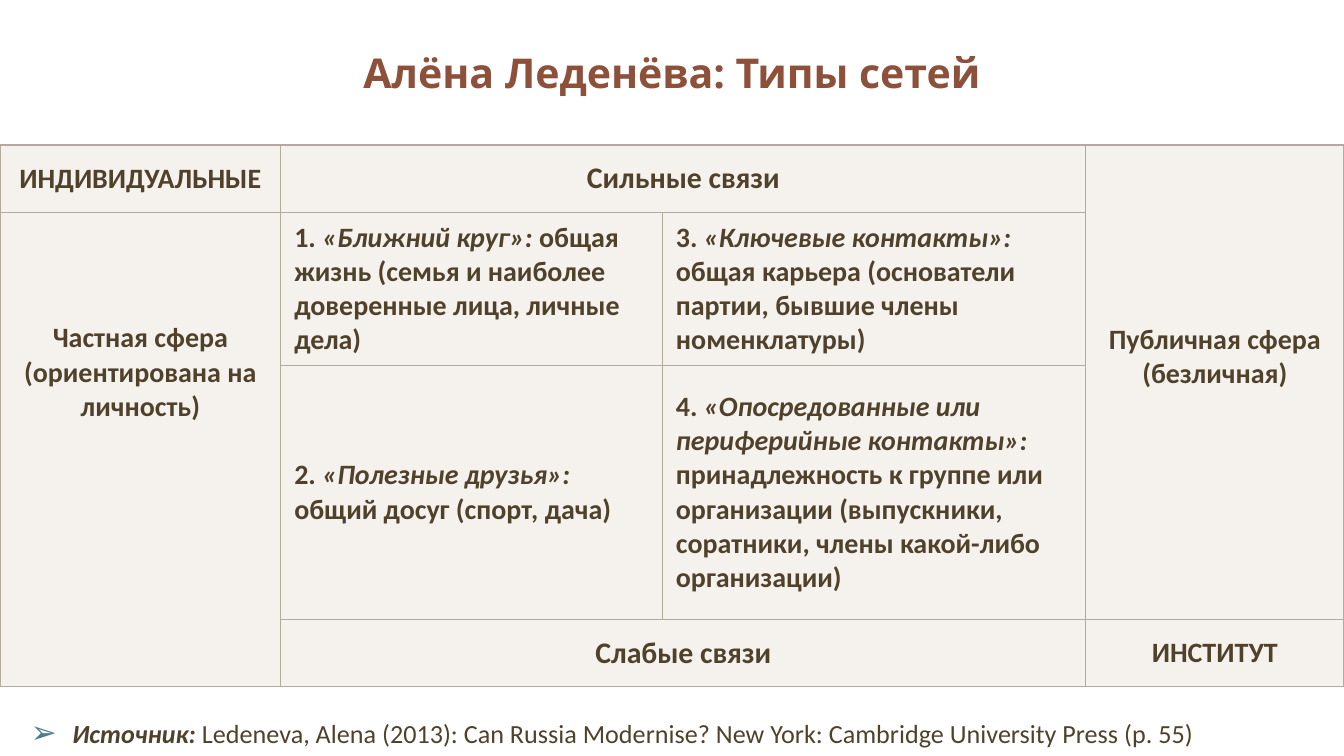
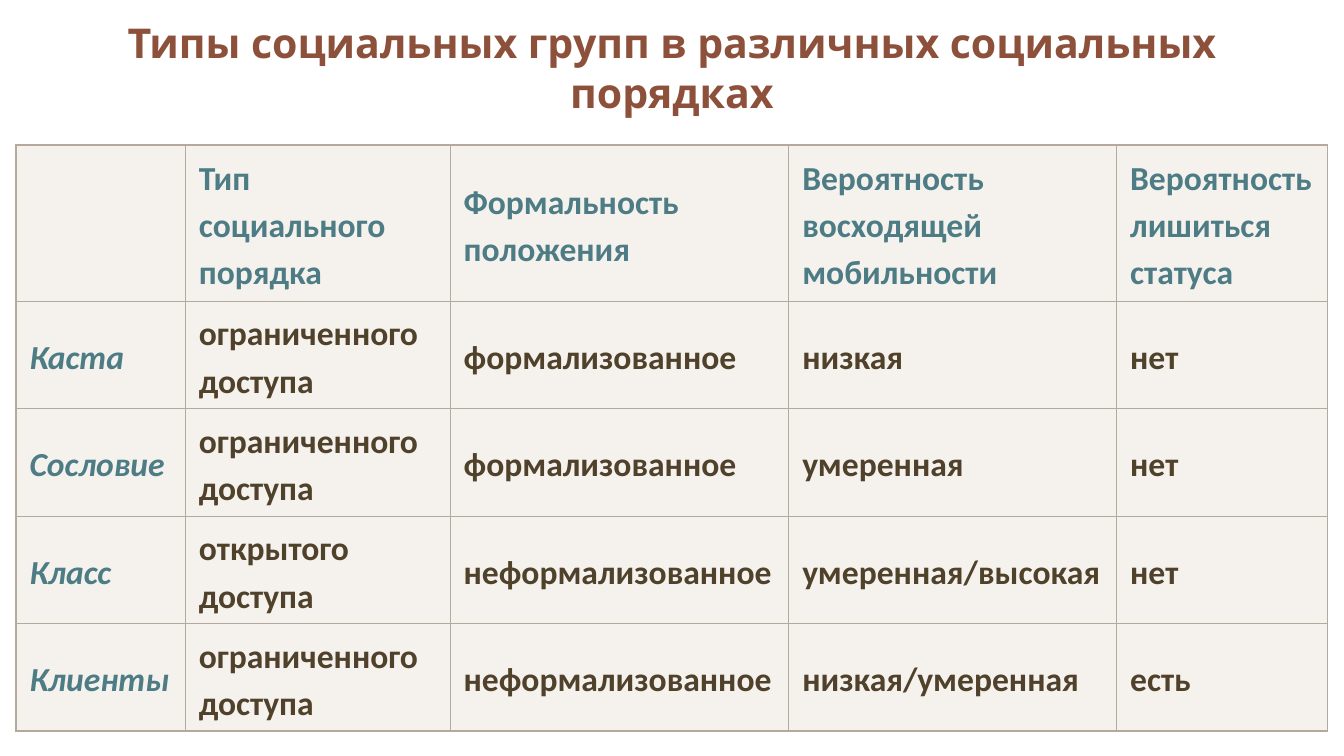
import pptx
import pptx.util
import pptx.dml.color
import pptx.enum.text
import pptx.oxml.ns
from lxml import etree

Inches, Pt = pptx.util.Inches, pptx.util.Pt
RGB = pptx.dml.color.RGBColor
ALIGN = pptx.enum.text.PP_ALIGN
ANCHOR = pptx.enum.text.MSO_ANCHOR
qn = pptx.oxml.ns.qn

COLORS = {"title": "8D503B", "text": "50412B", "heading": "4D7C85",
          "cell": "EFEAE4", "border": "B3AA9D", "bullet": "4D7C8B"}


def write_runs(paragraph, runs, size, color="text", font="Calibri"):
    """Add (text, bold, italic) runs to a paragraph."""
    for text, bold, italic in runs:
        run = paragraph.add_run()
        run.text = text
        run.font.size, run.font.name = Pt(size), font
        run.font.bold, run.font.italic = bold, italic
        run.font.color.rgb = RGB.from_string(COLORS[color])


def add_grid(slide, left, top, widths, heights, merges=()):
    """Add a table with translucent cells, thin inner and thicker outer borders."""
    table = slide.shapes.add_table(
        len(heights), len(widths), Inches(left), Inches(top),
        Inches(sum(widths)), Inches(sum(heights))).table
    table.first_row = table.horz_banding = False
    for column, width in zip(table.columns, widths):
        column.width = Inches(width)
    for row, height in zip(table.rows, heights):
        row.height = Inches(height)
    for first, last in merges:
        table.cell(*first).merge(table.cell(*last))

    for r in range(len(heights)):
        for c in range(len(widths)):
            cell = table.cell(r, c)
            cell.vertical_anchor = ANCHOR.MIDDLE
            cell.fill.solid()
            cell.fill.fore_color.rgb = RGB.from_string(COLORS["cell"])
            props = cell._tc.get_or_add_tcPr()
            etree.SubElement(props.find(".//" + qn("a:srgbClr")), qn("a:alpha"), val="60000")
            rows, cols = (cell.span_height, cell.span_width) if cell.is_merge_origin else (1, 1)
            outer = {"L": c == 0, "R": c + cols == len(widths),
                     "T": r == 0, "B": r + rows == len(heights)}
            for place, (side, is_outer) in enumerate(outer.items()):
                line = etree.Element(qn("a:ln" + side), w=str(Pt(1 if is_outer else 0.5)))
                fill = etree.SubElement(line, qn("a:solidFill"))
                etree.SubElement(fill, qn("a:srgbClr"), val=COLORS["border"])
                props.insert(place, line)
    return table


# Widescreen 16:9
prs = pptx.Presentation()
prs.slide_width = Inches(10)
prs.slide_height = prs.slide_width * 9 // 16

# Slides and titles
slides = []
for title, height in [("Алёна Леденёва: Типы сетей", 1.08),
                      ("Типы социальных групп в различных социальных порядках", 1)]:
    slide = prs.slides.add_slide(prs.slide_layouts[6])
    frame = slide.shapes.add_textbox(Inches(0.12), 0, Inches(9.76), Inches(height)).text_frame
    frame.word_wrap = True
    frame.vertical_anchor = ANCHOR.MIDDLE
    heading = frame.paragraphs[0]
    heading.alignment = ALIGN.CENTER
    heading.line_spacing = 1.0
    write_runs(heading, [(title, True, False)], 22, "title", "Open Sans")
    slides.append(slide)
networks_slide, groups_slide = slides

# Network types: spheres and tie strength around the four networks
networks = add_grid(networks_slide, 0, 1.08, [2.09, 2.84, 3.15, 1.92], [0.5, 1.14, 1.89, 0.5],
                    [((0, 1), (0, 2)), ((0, 3), (2, 3)), ((1, 0), (3, 0)), ((3, 1), (3, 2))])
for r, c, lines, size in [
        (0, 0, ["ИНДИВИДУАЛЬНЫЕ"], 15),
        (0, 1, ["Сильные связи"], 16),
        (0, 3, ["Публичная сфера", "(безличная)"], 15),
        (1, 0, ["Частная сфера (ориентирована на личность)"], 15),
        (3, 1, ["Слабые связи"], 16),
        (3, 3, ["ИНСТИТУТ"], 15)]:
    frame = networks.cell(r, c).text_frame
    for i, line in enumerate(lines):
        paragraph = frame.add_paragraph() if i else frame.paragraphs[0]
        paragraph.alignment = ALIGN.CENTER
        write_runs(paragraph, [(line, True, False)], size)

# The two sphere labels hang from the top of their tall cells
for r, c, drop in [(0, 3, 1.32), (1, 0, 0.81)]:
    sphere = networks.cell(r, c)
    sphere.vertical_anchor = ANCHOR.TOP
    sphere.margin_top = Inches(drop)

for r, c, number, name, description in [
        (1, 1, "1. ", "«Ближний круг»: ",
         "общая жизнь (семья и наиболее доверенные лица, личные дела)"),
        (2, 1, "2. ", "«Полезные друзья»: ", "общий досуг (спорт, дача)"),
        (1, 2, "3. ", "«Ключевые контакты»: ",
         "общая карьера (основатели партии, бывшие члены номенклатуры)"),
        (2, 2, "4. ", "«Опосредованные или периферийные контакты»: ",
         "принадлежность к группе или организации "
         "(выпускники, соратники, члены какой-либо организации)")]:
    write_runs(networks.cell(r, c).text_frame.paragraphs[0],
               [(number, True, False), (name, True, True), (description, True, False)], 15)

# Source line with an arrow bullet
frame = networks_slide.shapes.add_textbox(
    Inches(0.13), Inches(5.29), Inches(9.43), Inches(0.34)).text_frame
frame.word_wrap = True
source = frame.paragraphs[0]
props = source._p.get_or_add_pPr()
props.set("marL", str(Inches(0.31)))
props.set("indent", str(-Inches(0.31)))
bullet_color = etree.SubElement(props, qn("a:buClr"))
etree.SubElement(bullet_color, qn("a:srgbClr"), val=COLORS["bullet"])
etree.SubElement(props, qn("a:buSzPct"), val="120000")
etree.SubElement(props, qn("a:buFont"), typeface="Calibri")
etree.SubElement(props, qn("a:buChar"), char="➢")
write_runs(source, [
    ("Источник: ", True, True),
    ("Ledeneva, Alena (2013): Can Russia Modernise? "
     "New York: Cambridge University Press (p. 55)", False, False)], 14)

# Social groups by social order
group_rows = [
    ["", "Тип социального порядка", "Формальность положения",
     "Вероятность восходящей мобильности", "Вероятность лишиться статуса"],
    ["Каста", "ограниченного доступа", "формализованное", "низкая", "нет"],
    ["Сословие", "ограниченного доступа", "формализованное", "умеренная", "нет"],
    ["Класс", "открытого доступа", "неформализованное", "умеренная/высокая", "нет"],
    ["Клиенты", "ограниченного доступа", "неформализованное", "низкая/умеренная", "есть"],
]
groups = add_grid(groups_slide, 0.12, 1.08, [1.26, 1.97, 2.52, 2.44, 1.57], [1.16] + [0.8] * 4)
for r, row in enumerate(group_rows):
    for c, text in enumerate(row):
        if not text:
            continue
        paragraph = groups.cell(r, c).text_frame.paragraphs[0]
        paragraph.line_spacing = 1.15
        paragraph.space_after = Pt(10)
        write_runs(paragraph, [(text, True, c == 0)], 18,
                   "heading" if r == 0 or c == 0 else "text")

prs.save("out.pptx")
